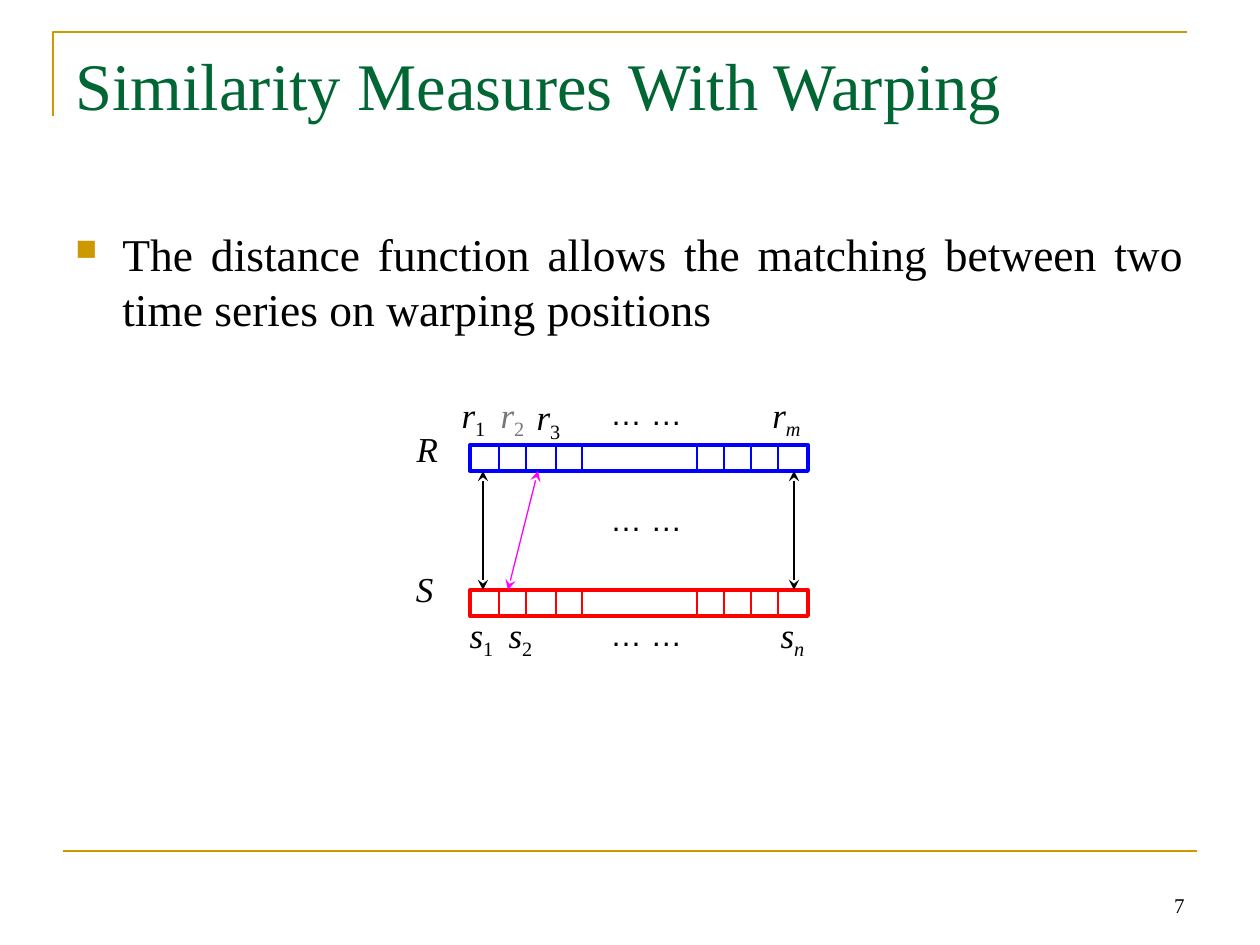
from lxml import etree
from pptx import Presentation
from pptx.dml.color import RGBColor
from pptx.enum import shapes, text
from pptx.oxml import ns
from pptx import util as u

INK = {"gold": "CC9900", "green": "006633", "black": "000000", "gray": "777777",
       "blue": "0000FF", "red": "FF0000", "pink": "FF00FF"}
SERIF = "Times New Roman"
TICKS = (29, 56, 86, 112, 227, 254, 281, 308)


def px(n):
    """Turn px into EMU."""
    return u.Emu(round(n * 914400 / 126))


def rgb(name):
    """Look up a colour."""
    return RGBColor.from_string(INK[name])


def add_el(host, tag, **attrs):
    """Append a DrawingML element to its host."""
    return etree.SubElement(host, ns.qn(tag), attrs)


def add_text(slide, box, align=text.PP_ALIGN.LEFT, anchor=text.MSO_ANCHOR.TOP):
    """Add a wrapping text box and return its first paragraph."""
    frame = slide.shapes.add_textbox(*map(px, box)).text_frame
    frame.word_wrap = True
    frame.vertical_anchor = anchor
    para = frame.paragraphs[0]
    para.alignment = align
    return para


def add_run(para, words, size, ink="black", face=SERIF, slant=False, sub=False):
    """Add one styled run."""
    run = para.add_run()
    run.text = words
    font = run.font
    font.size, font.name, font.italic = u.Pt(size), face, slant
    font.color.rgb = rgb(ink)
    if sub:
        run._r.get_or_add_rPr().set("baseline", "-25000")


def add_line(slide, start, end, ink, width=0.75, arrows=False):
    """Draw a straight line, with arrowheads at both ends if asked."""
    line = slide.shapes.add_connector(
        shapes.MSO_CONNECTOR.STRAIGHT, *map(px, (*start, *end)))
    line.line.color.rgb = rgb(ink)
    line.line.width = u.Pt(width)
    if arrows:
        for tag in ("a:headEnd", "a:tailEnd"):
            add_el(line.line._get_or_add_ln(), tag, type="stealth")
    add_el(line._element.spPr, "a:effectLst")


def frame(slide, x, y, w, h):
    """Draw the corner rule, the foot rule and the page number."""
    build = slide.shapes.build_freeform(px(x), px(y + 84), scale=1.0)
    build.add_line_segments([(px(x), px(y)), (px(x + w), px(y))], close=False)
    edge = build.convert_to_shape()
    edge.shadow.inherit = False
    edge.fill.background()
    edge.line.color.rgb = rgb("gold")
    edge.line.width = u.Pt(1.5)
    add_line(slide, (x + 10, y + h), (x + 10 + w, y + h), "gold", 1.5)
    para = add_text(slide, (x + 850, y + h + 10, 294, 63),
                    text.PP_ALIGN.RIGHT, text.MSO_ANCHOR.BOTTOM)
    add_run(para, "7", 12)


def title(slide, *box):
    """Write the heading."""
    add_run(add_text(slide, box), "Similarity Measures With Warping", 38, "green")


def body(slide, *box):
    """Write the bulleted statement."""
    para = add_text(slide, box, text.PP_ALIGN.JUSTIFY)
    para.space_before = u.Pt(5)
    props = para._p.get_or_add_pPr()
    props.set("marL", str(px(47)))
    props.set("indent", str(px(-47)))
    add_el(add_el(props, "a:buClr"), "a:srgbClr", val=INK["gold"])
    add_el(props, "a:buSzPct", val="65000")
    add_el(props, "a:buChar", char="■")
    add_run(para, "The distance function allows the matching between two "
                  "time series on warping positions", 26)


def series(slide, x, y, w, h, ink):
    """Draw one time series as a bar with cell ticks."""
    bar = slide.shapes.add_shape(
        shapes.MSO_SHAPE.RECTANGLE, *map(px, (x, y, w, h)))
    bar.shadow.inherit = False
    bar.fill.background()
    bar.line.color.rgb = rgb(ink)
    bar.line.width = u.Pt(2.25)
    for tick in TICKS:
        add_line(slide, (x + tick, y + 1), (x + tick, y + h - 1), ink)


def label(slide, x, y, w, name, sub="", ink="black"):
    """Write a symbol with an optional subscript."""
    para = add_text(slide, (x, y, w, 54), text.PP_ALIGN.CENTER)
    add_run(para, name, 20, ink, slant=True)
    if sub:
        add_run(para, sub, 20, ink, slant=sub.isalpha(), sub=True)


def warping(slide, x, y, w, h):
    """Draw the two series, their labels and the matches between them."""
    top, low, tall = y + 58, y + 203, 26
    for level, ink in ((top, "blue"), (low, "red")):
        series(slide, x + 69, level, w - 69, tall, ink)
    for start, end, ink in ((82, 82, "black"), (137, 107, "pink"),
                            (393, 393, "black")):
        add_line(slide, (x + start, top + tall), (x + end, low), ink, arrows=True)
    label(slide, x, y + 34, 53, "R")
    label(slide, x + 2, y + 174, 43, "S")
    for dx, dy, name, sub, ink in (
            (36, 0, "r", "1", "black"), (75, 0, "r", "2", "gray"),
            (111, 2, "r", "3", "black"), (349, 0, "r", "m", "black"),
            (44, h - 54, "s", "1", "black"), (83, h - 54, "s", "2", "black"),
            (355, h - 54, "s", "n", "black")):
        label(slide, x + dx, y + dy, 73, name, sub, ink)
    for dy in (1, 107, h - 52):
        add_run(add_text(slide, (x + 197, y + dy, 120, 50)), "… …", 18, face="Arial")


def main():
    """Build and save the slide."""
    deck = Presentation()
    deck.slide_width, deck.slide_height = px(1260), px(945)
    slide = deck.slides.add_slide(deck.slide_layouts[6])
    frame(slide, 53, 32, 1134, 819)
    title(slide, 63, 38, 1134, 158)
    body(slide, 63, 220, 1134, 624)
    warping(slide, 401, 387, 407, 274)
    deck.save("out.pptx")


if __name__ == "__main__":
    main()
